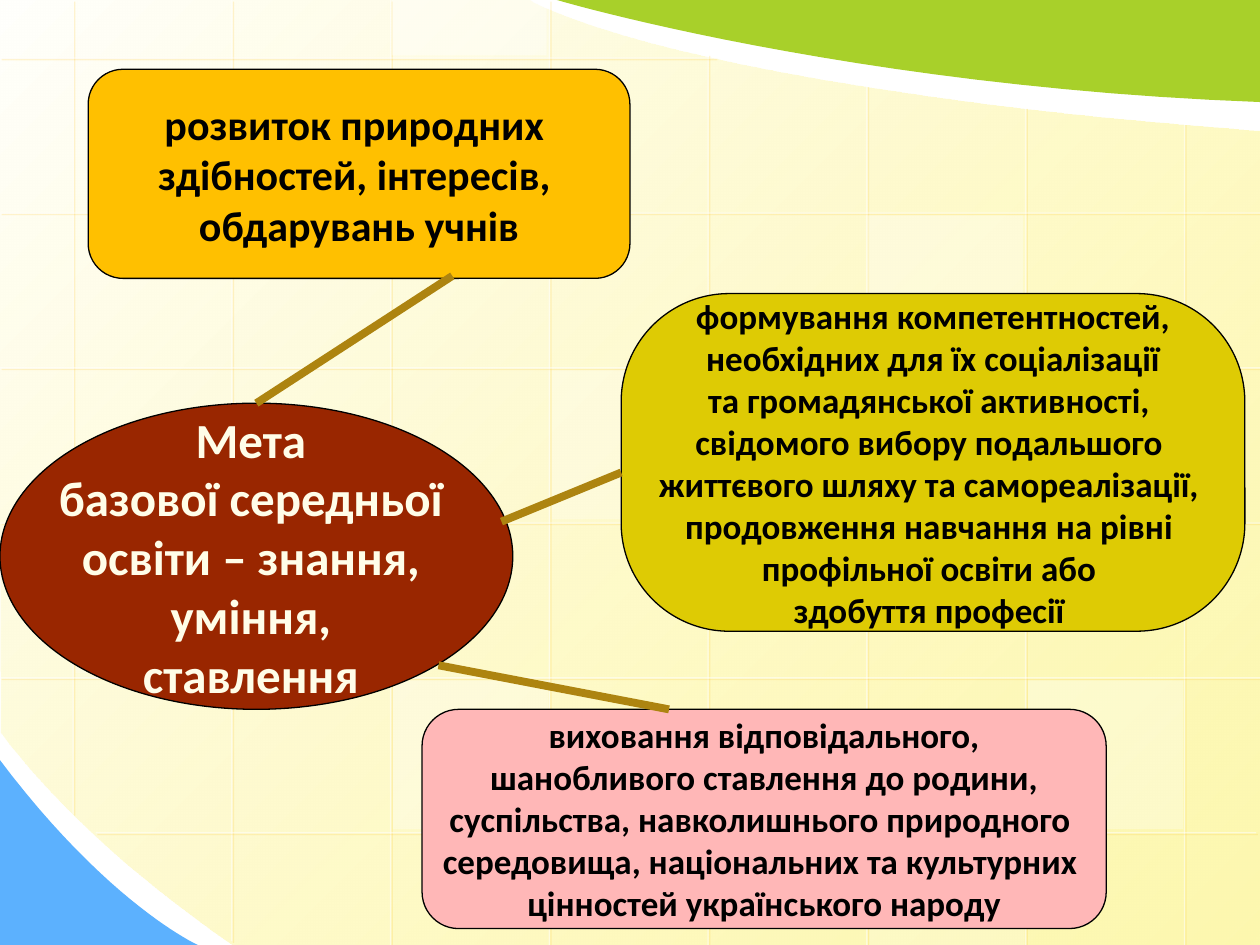
from lxml import etree
from pptx import Presentation
from pptx.dml.color import RGBColor
from pptx.enum.shapes import MSO_CONNECTOR, MSO_SHAPE
from pptx.enum.text import MSO_ANCHOR, PP_ALIGN
from pptx.oxml import parse_xml
from pptx.oxml.ns import nsdecls, qn
from pptx.util import Inches, Pt

COLORS = {
    "white": "FFFFFF", "cream": "FFFFFC", "yellow": "FDF58D",
    "blue": "5CB1FE", "green": "A8D02A", "grid_shadow": "FFC319",
    "brown": "992600", "ivory": "FFFDE8", "amber": "FFC000",
    "olive": "DECB04", "pink": "FFB7B7", "black": "000000", "link": "AD8410",
}
RGB = {name: RGBColor.from_string(value) for name, value in COLORS.items()}
CURVE_STEPS = 24


def set_alpha(color_element, percent):
    etree.SubElement(color_element, qn("a:alpha")).set("val", str(percent * 1000))


def add_line(start, end, color, width):
    ends = [Inches(value) for value in (*start, *end)]
    line = slide.shapes.add_connector(MSO_CONNECTOR.STRAIGHT, *ends)
    line.line.color.rgb = RGB[color]
    line.line.width = Pt(width)
    effects = parse_xml(f"<a:effectLst {nsdecls('a')}/>")
    line._element.spPr.append(effects)
    return line, effects


presentation = Presentation()
presentation.slide_width = Inches(10)
presentation.slide_height = Inches(7.5)
slide = presentation.slides.add_slide(presentation.slide_layouts[6])
slide.background.fill.solid()
slide.background.fill.fore_color.rgb = RGB["white"]

# Background areas: a pair is a corner, a triple of pairs is a cubic curve
areas = {
    "yellow": [(10, 1.04), (10, 7.5), (1.87, 7.51),
               ((0.54, 6.6), (0.01, 5.8), (0.01, 5.81)), (-0.01, -0.01),
               (4.2, 0), ((4.2, 0.01), (5.36, 0.69), (10, 1.04))],
    "blue": [(-0.01, 6.02), (-0.01, 7.5), (1.57, 7.5),
             ((1.57, 7.5), (0.86, 7.18), (-0.01, 6.02))],
    "green": [(10, 0.81), (10, 0), (4.42, 0),
              ((4.42, 0), (6.74, 0.69), (10, 0.81))],
}
area_shapes = {}
for name, outline in areas.items():
    points = []
    for part in outline:
        if len(part) == 2:
            points.append(part)
            continue
        controls = (points[-1], *part)
        for step in range(1, CURVE_STEPS + 1):
            t = step / CURVE_STEPS
            weights = ((1 - t) ** 3, 3 * t * (1 - t) ** 2, 3 * t * t * (1 - t), t ** 3)
            points.append(tuple(sum(w * c[axis] for w, c in zip(weights, controls))
                                for axis in (0, 1)))
    points = [(Inches(x), Inches(y)) for x, y in points]
    builder = slide.shapes.build_freeform(*points[0])
    builder.add_line_segments(points[1:], close=True)
    shape = builder.convert_to_shape()
    shape.shadow.inherit = False
    shape.line.fill.background()
    shape.fill.solid()
    shape.fill.fore_color.rgb = RGB[name]
    area_shapes[name] = shape

fill = area_shapes["yellow"].fill
fill.gradient()
fill.gradient_angle = 315
for stop, color, position in zip(fill.gradient_stops, ("cream", "yellow"), (0, 1)):
    stop.color.rgb = RGB[color]
    stop.position = position
set_alpha(list(area_shapes["yellow"]._element.spPr.iter(qn("a:srgbClr")))[-1], 70)

# Grid lines: (top, bottom) of the columns, (left, right) of the rows
columns = [(0, 6.46), (0, 7.47), (0, 7.5), (0, 7.5),
           (0.43, 7.5), (0.68, 7.5), (0.85, 7.5), (0.98, 7.5)]
rows = [(0, 5.68), (0, 10), (0, 10), (0, 10), (0, 10), (0.76, 9.97)]
grid = [((0.58 + 1.26 * i, top), (0.58 + 1.26 * i, bottom))
        for i, (top, bottom) in enumerate(columns)]
grid += [((right, 0.46 + 1.23 * i), (left, 0.46 + 1.23 * i))
         for i, (left, right) in enumerate(rows)]
for start, end in grid:
    line, effects = add_line(start, end, "white", 0.75)
    set_alpha(next(line._element.spPr.iter(qn("a:srgbClr"))), 50)
    shadow = etree.SubElement(effects, qn("a:outerShdw"), blurRad="0",
                              dist=str(Pt(1.4)), dir="2700000", algn="ctr")
    shadow_color = etree.SubElement(shadow, qn("a:srgbClr"), val=COLORS["grid_shadow"])
    set_alpha(shadow_color, 35)

# Pale grid cells: left, top, height, opacity
for left, top, height, opacity in [
    (4.38, 2.94, 1.18, 25), (8.16, 5.4, 1.18, 30), (0.6, 4.16, 1.18, 20),
    (6.9, 6.63, 0.87, 20), (3.11, 0, 0.44, 40), (3.12, 5.4, 1.18, 30),
    (6.89, 1.71, 1.18, 30),
]:
    cell = slide.shapes.add_shape(MSO_SHAPE.RECTANGLE, Inches(left), Inches(top),
                                  Inches(1.23), Inches(height))
    cell.shadow.inherit = False
    cell.line.fill.background()
    cell.fill.solid()
    cell.fill.fore_color.rgb = RGB["white"]
    set_alpha(next(cell._element.spPr.iter(qn("a:srgbClr"))), opacity)

# Goal and its three aims: box, corner, fill, text colour, size, lines
bubbles = [
    ((0, 3.2, 4.07, 2.43), None, "brown", "ivory", 28,
     ["Мета ", "базової середньої ", "освіти – знання, ", "уміння, ", "ставлення "]),
    ((0.7, 0.55, 4.3, 1.66), 0.167, "amber", "black", 24,
     ["розвиток природних ", "здібностей, інтересів, ", "обдарувань учнів"]),
    ((4.93, 2.33, 4.95, 2.68), 0.32, "olive", "black", 20,
     ["формування компетентностей,", " необхідних для їх соціалізації ",
      "та громадянської активності, ", "свідомого вибору подальшого ",
      "життєвого шляху та самореалізації, ", "продовження навчання на рівні ",
      "профільної освіти або ", "здобуття професії "]),
    ((3.35, 5.63, 5.43, 1.74), 0.167, "pink", "black", 20,
     ["виховання відповідального,", " шанобливого ставлення до родини, ",
      "суспільства, навколишнього природного ",
      "середовища, національних та культурних ", "цінностей українського народу"]),
]
bubble_shapes = []
for box, corner, fill_color, text_color, size, lines in bubbles:
    preset = MSO_SHAPE.ROUNDED_RECTANGLE if corner else MSO_SHAPE.OVAL
    shape = slide.shapes.add_shape(preset, *[Inches(value) for value in box])
    if corner:
        shape.adjustments[0] = corner
    shape.shadow.inherit = False
    shape.fill.solid()
    shape.fill.fore_color.rgb = RGB[fill_color]
    shape.line.color.rgb = RGB["black"]
    shape.line.width = Pt(0.75)
    frame = shape.text_frame
    frame.text = "\n".join(lines)
    frame.word_wrap = False
    frame.vertical_anchor = MSO_ANCHOR.MIDDLE
    font_format = {"name": "Calibri", "size": Pt(size), "bold": True}
    for paragraph in frame.paragraphs:
        paragraph.alignment = PP_ALIGN.CENTER
        for attribute, value in font_format.items():
            setattr(paragraph.font, attribute, value)
        paragraph.font.color.rgb = RGB[text_color]
    bubble_shapes.append(shape)

# Links from the goal to the aims
links = [((3.59, 2.19), (2.04, 3.2)), ((3.98, 4.14), (4.93, 3.75)),
         ((3.48, 5.28), (5.31, 5.63))]
link_lines = [add_line(start, end, "link", 4.5)[0] for start, end in links]
link_lines[0].end_connect(bubble_shapes[0], 0)

presentation.save("out.pptx")
